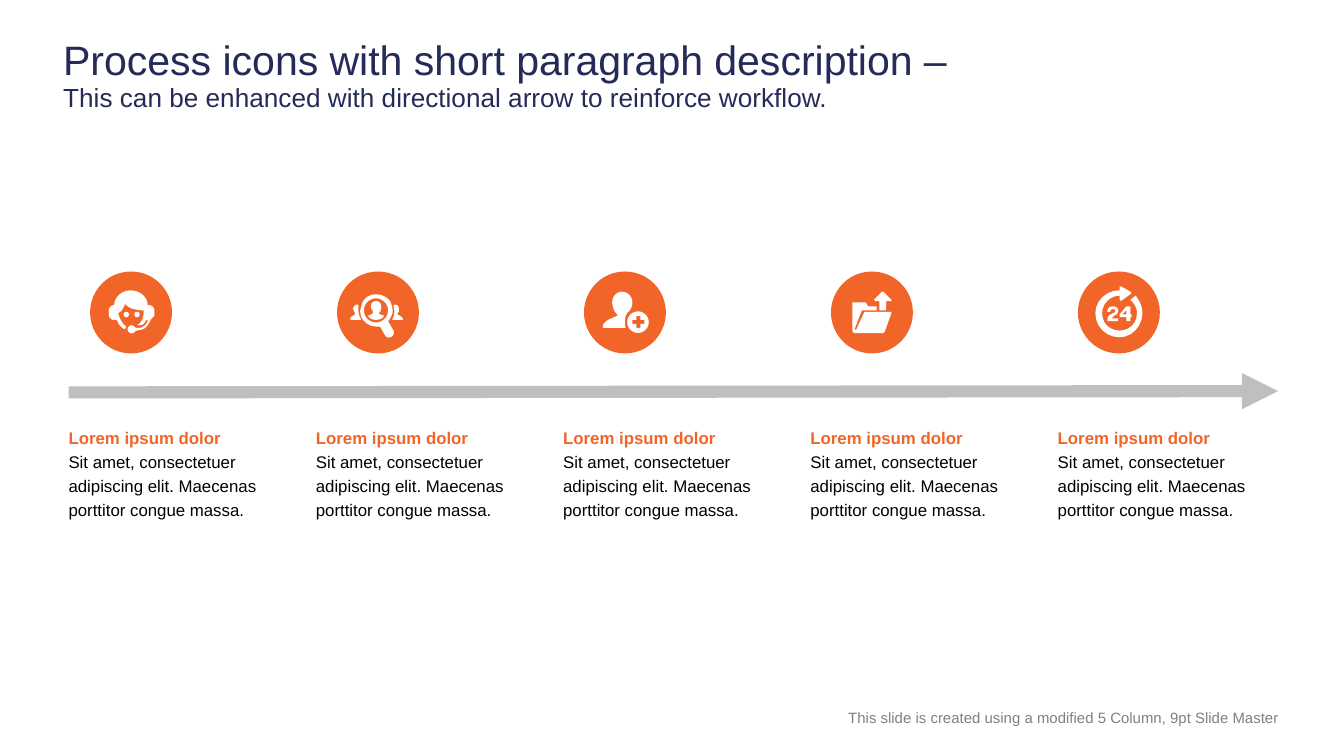
from pptx import Presentation
from pptx import util as u
from pptx.dml.color import RGBColor
from pptx.enum import shapes, text
from pptx.oxml.ns import qn
from lxml import etree
import math

NAVY = RGBColor(0x24, 0x2B, 0x58)
ORANGE = RGBColor(0xF1, 0x66, 0x28)
SILVER = RGBColor(0xBF, 0xBF, 0xBF)
GRAY = RGBColor(0x80, 0x80, 0x80)
BLACK = RGBColor(0, 0, 0)
WHITE = RGBColor(0xFF, 0xFF, 0xFF)

TEXT_STEP = 1.84
ICON_STEP = 7.35 / 4
CURVE_STEPS = 6
FINE = 100  # freeform points are whole numbers, so outlines are drawn enlarged

# Icon outlines in hundredths of an inch from the corner of the disc:
# M move, L line, C cubic curve, O circle (centre and radius)
AGENT = """O 35 32 2 O 27 32 2
M 44 25 L 43 25 C 43 19 37 14 30 14 C 24 14 18 19 18 25 C 16 25 14 27 14 29
L 14 32 C 14 34 16 36 17 36 L 20 36 C 21 39 23 42 26 43 L 27 41
C 24 39 22 35 21 31 C 23 30 25 28 26 24 C 26 24 29 29 40 29
C 40 34 39 38 35 40 C 36 40 39 40 40 39 L 42 36 L 43 36
C 43 37 42 39 41 40 C 40 41 39 41 38 42 L 34 42 C 33 41 32 40 31 40
C 29 40 28 42 28 43 C 28 44 29 46 31 46 C 32 46 34 45 34 44
C 36 44 41 43 42 41 C 43 40 45 37 45 36 L 46 35 C 47 34 48 33 48 32
L 48 29 C 48 27 46 25 44 25"""
SEARCH = """M 31 31 L 32 30 C 34 27 33 22 29 22 C 25 22 24 27 27 30
C 27 31 26 32 23 33 C 25 36 28 36 29 36 C 32 36 34 35 35 33 C 33 32 31 32 31 31
O 29 29 9
M 38 37 C 39 36 40 34 41 32 C 42 29 41 26 40 23 C 38 19 33 17 29 17
C 24 17 19 20 18 26 C 15 33 21 41 29 41 L 32 41 L 36 48 C 38 51 44 48 42 44
M 16 25 C 15 24 12 25 12 28 L 13 30 C 14 32 13 32 12 33 C 10 34 10 34 10 36
L 18 36 C 15 31 16 27 16 25
M 41 36 L 49 36 C 49 34 48 34 47 33 C 45 32 44 32 46 30 L 46 28
C 46 26 45 24 42 25 C 43 29 43 33 41 36"""
ADD_USER = """M 45 39 L 42 39 L 42 42 L 39 42 L 39 39 L 36 39 L 36 36 L 39 36
L 39 33 L 42 33 L 42 36 L 45 36 O 40.2 37.7 8
M 32 31 C 33 30 36 28 36 23 C 36 18 32 15 28 15 C 25 15 21 18 21 23
C 21 25 22 28 23 30 C 24 31 25 32 25 33 C 24 33 23 34 20 35
C 18 36 14 38 14 41 L 14 42 L 31 42 C 30 39 30 34 32 31"""
FOLDER = """M 45 30 L 25 30 L 19 43 C 19 44 17 43 18 42 L 23 29 L 34 29 L 34 26
L 28 26 L 27 25 L 26 23 L 16 23 L 16 44 C 16 45 17 46 18 46 L 38 46
C 39 46 40 45 40 45 L 45 31
M 33 22 L 36 22 L 36 29 L 41 29 L 41 22 L 45 22 L 45 21 L 39 15 L 38 15 L 32 21"""
ALL_DAY = """M 26 31 C 25 32 24 32 23 33 C 22 34 22 36 22 37 L 30 37 L 30 35 L 25 35
C 26 34 26 34 27 33 C 29 32 30 31 30 29 C 30 27 28 26 26 26 C 23 26 22 28 22 30
L 24 30 C 24 29 25 28 26 28 C 27 28 28 29 28 29 C 28 30 27 31 26 31
M 36 32 L 33 32 L 36 29
M 36 26 L 31 32 L 31 34 L 36 34 L 36 37 L 39 37 L 39 34 L 40 34 L 40 32 L 39 32 L 39 26
M 43 18 C 40 20 41 20 39 21 C 42 24 44 27 44 31 C 44 39 38 44 31 44
C 24 44 18 39 18 31 C 18 24 24 18 31 18 L 31 21 L 32 22 C 35 20 36 19 39 17
C 40 16 40 16 39 15 L 32 11 L 31 11 L 31 14 C 21 14 13 22 13 31
C 13 41 21 49 31 49 C 40 49 48 41 48 31 C 48 26 46 22 43 18"""
ICONS = [AGENT, SEARCH, ADD_USER, FOLDER, ALL_DAY]


def outline(commands):
    """Turn icon commands into a list of contours made of points."""
    tokens = iter(commands.split())
    contours = []
    for command in tokens:
        count = {"M": 2, "L": 2, "C": 6, "O": 3}[command]
        n = [float(next(tokens)) * FINE for _ in range(count)]
        if command == "M":
            contours.append([tuple(n)])
        elif command == "L":
            contours[-1].append(tuple(n))
        elif command == "O":
            angles = [math.radians(a) for a in range(0, 360, 12)]
            contours.append([(n[0] + n[2] * math.cos(a), n[1] + n[2] * math.sin(a))
                             for a in angles])
        else:
            x0, y0 = contours[-1][-1]
            for i in range(1, CURVE_STEPS + 1):
                t = i / CURVE_STEPS
                k = ((1 - t) ** 3, 3 * t * (1 - t) ** 2, 3 * t * t * (1 - t), t ** 3)
                contours[-1].append((sum(a * b for a, b in zip(k, (x0, *n[0::2]))),
                                     sum(a * b for a, b in zip(k, (y0, *n[1::2])))))
    return contours


class Deck:
    """The font and the slide being filled."""

    def __init__(self, slide, font="Arial"):
        self.slide = slide
        self.font = font

    def frame(self, sp, left, top, width, height, anchor=text.MSO_ANCHOR.TOP):
        sp.left, sp.top = u.Inches(left), u.Inches(top)
        sp.width, sp.height = u.Inches(width), u.Inches(height)
        tf = sp.text_frame
        tf.margin_left = tf.margin_top = tf.margin_right = tf.margin_bottom = 0
        tf.auto_size = text.MSO_AUTO_SIZE.NONE
        tf.word_wrap = True
        tf.vertical_anchor = anchor
        return tf

    def paragraph(self, p, level=0, align=text.PP_ALIGN.LEFT, spacing=1.0, after=0):
        p.level = level
        p.alignment = align
        p.line_spacing = spacing
        p.space_before, p.space_after = u.Pt(0), u.Pt(after)
        pPr = p._p.get_or_add_pPr()
        pPr.set("marL", "0")
        pPr.set("indent", "0")
        etree.SubElement(pPr, qn("a:buNone"))
        return p

    def run(self, p, words, size, color, bold=False):
        r = p.add_run()
        r.text = words
        r.font.name, r.font.size, r.font.bold = self.font, u.Pt(size), bold
        r.font.color.rgb = color

    def title(self, heading, subheading):
        tf = self.frame(self.slide.shapes.title, 0.47, 0.3, 9.04, 1.09)
        p = self.paragraph(tf.paragraphs[0], spacing=0.9)
        self.run(p, heading, 22, NAVY)
        p.add_line_break()
        self.run(p, subheading, 14, NAVY)

    def column(self, sp, left, heading, description):
        tf = self.frame(sp, left, 3.18, 1.65, 0.7)
        self.run(self.paragraph(tf.paragraphs[0], level=3), heading, 9, ORANGE, True)
        p = self.paragraph(tf.add_paragraph(), level=4, spacing=1.2, after=4)
        self.run(p, description, 9, BLACK)

    def fill(self, sp, color):
        sp.shadow.inherit = False
        sp.fill.solid()
        sp.fill.fore_color.rgb = color
        sp.line.fill.background()

    def icon(self, left, top, commands):
        size = u.Inches(0.61)
        disc = self.slide.shapes.add_shape(shapes.MSO_SHAPE.OVAL, u.Inches(left),
                                           u.Inches(top), size, size)
        self.fill(disc, ORANGE)
        first, *others = outline(commands)
        builder = self.slide.shapes.build_freeform(*first[0],
                                                   scale=u.Inches(0.01) / FINE)
        builder.add_line_segments(first[1:])
        for contour in others:
            builder.move_to(*contour[0])
            builder.add_line_segments(contour[1:])
        self.fill(builder.convert_to_shape(u.Inches(left), u.Inches(top)), WHITE)

    def arrow(self, x1, y1, x2, y2):
        line = self.slide.shapes.add_connector(
            shapes.MSO_CONNECTOR.STRAIGHT,
            u.Inches(x1), u.Inches(y1), u.Inches(x2), u.Inches(y2))
        line.line.color.rgb = SILVER
        line.line.width = u.Pt(6.5)
        etree.SubElement(line.line._get_or_add_ln(), qn("a:tailEnd"), type="triangle")
        etree.SubElement(line._element.spPr, qn("a:effectLst"))

    def note(self, words):
        sp = self.slide.shapes.add_textbox(0, 0, 0, 0)
        tf = self.frame(sp, 4.19, 5.09, 5.33, 0.49, text.MSO_ANCHOR.MIDDLE)
        p = self.paragraph(tf.paragraphs[0], level=3, align=text.PP_ALIGN.RIGHT)
        self.run(p, words, 8, GRAY)


def main():
    prs = Presentation()
    prs.slide_width = u.Inches(10)
    prs.slide_height = prs.slide_width * 9 // 16
    s = prs.slides.add_slide(prs.slide_layouts.get_by_name("Comparison"))
    deck = Deck(s)

    # Title
    deck.title("Process icons with short paragraph description –",
               "This can be enhanced with directional arrow to reinforce workflow.")

    # Step columns: four layout placeholders and one text box
    bodies = [sp for sp in s.placeholders if 1 <= sp.placeholder_format.idx <= 4]
    bodies.append(s.shapes.add_textbox(0, 0, 0, 0))
    for i, (sp, commands) in enumerate(zip(bodies, ICONS)):
        deck.column(sp, 0.51 + i * TEXT_STEP, "Lorem ipsum dolor",
                    "Sit amet, consectetuer adipiscing elit. "
                    "Maecenas porttitor congue massa.")
        deck.icon(0.67 + i * ICON_STEP, 2.02, commands)

    # Workflow arrow and footnote
    deck.arrow(0.51, 2.92, 9.51, 2.91)
    deck.note("This slide is created using a modified 5 Column, 9pt Slide Master")

    prs.save("out.pptx")


if __name__ == "__main__":
    main()
